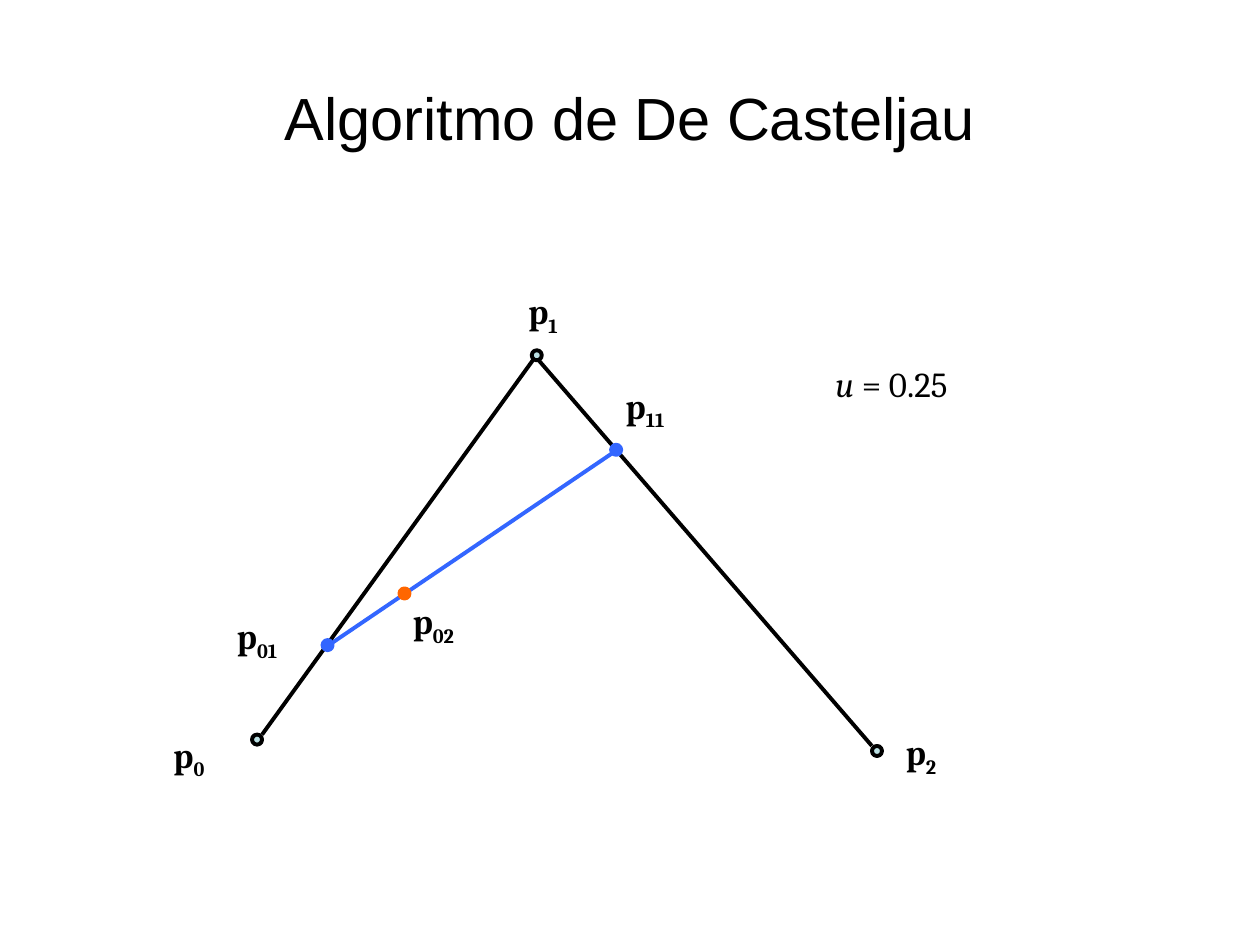
from dataclasses import dataclass

from pptx import Presentation
from pptx import util as u
from pptx.dml.color import RGBColor
from pptx.enum import shapes, text
from pptx.oxml import parse_xml
from pptx.oxml.ns import nsdecls

PX = 9144  # EMU in one px, 100 px to the inch


@dataclass(frozen=True)
class Theme:
    ink: str = "000000"
    pale: str = "BBE0E3"
    blue: str = "3366FF"
    fire: str = "FF6600"
    head: str = "Arial"
    body: str = "Cambria"
    big: int = 34
    mid: int = 20
    line: float = 2.25


@dataclass(frozen=True)
class Edge:
    x1: int
    y1: int
    x2: int
    y2: int
    color: str


@dataclass(frozen=True)
class Dot:
    x: int
    y: int
    fill: str
    line: str


@dataclass(frozen=True)
class Label:
    sub: str
    x: int
    y: int
    w: int


T = Theme()
DOT = 8
TALL = 43

EDGES = [
    Edge(261, 512, 487, 359, T.blue),
    Edge(208, 583, 425, 283, T.ink),
    Edge(425, 283, 692, 592, T.ink),
]
DOTS = [
    Dot(200, 583, T.pale, T.ink),
    Dot(422, 278, T.pale, T.ink),
    Dot(692, 592, T.pale, T.ink),
    Dot(256, 508, T.blue, T.blue),
    Dot(485, 353, T.blue, T.blue),
    Dot(317, 467, T.fire, T.fire),
]
LABELS = [
    Label("0", 127, 577, 46),
    Label("1", 408, 225, 46),
    Label("2", 708, 575, 46),
    Label("11", 483, 300, 58),
    Label("01", 175, 483, 58),
    Label("02", 315, 471, 58),
]


def px(n: int) -> u.Emu:
    return u.Emu(n * PX)


def rgb(color: str) -> RGBColor:
    return RGBColor.from_string(color)


def write(par, words: str, *, font: str = T.body, size: int = T.mid,
          bold: bool = False, slant: bool = False, sub: bool = False) -> None:
    par.alignment = text.PP_ALIGN.CENTER
    run = par.add_run()
    run.text = words
    face = run.font
    face.name, face.size = font, u.Pt(size)
    face.bold, face.italic = bold, slant
    face.color.rgb = rgb(T.ink)
    if sub:
        run._r.get_or_add_rPr().set("baseline", "-25000")


def add_box(slide, x: int, y: int, w: int, wrap: bool = True):
    box = slide.shapes.add_textbox(px(x), px(y), px(w), px(TALL))
    frame = box.text_frame
    frame.word_wrap = wrap
    frame.auto_size = text.MSO_AUTO_SIZE.SHAPE_TO_FIT_TEXT
    return frame.paragraphs[0]


def add_edge(slide, edge: Edge) -> None:
    line = slide.shapes.add_connector(
        shapes.MSO_CONNECTOR.STRAIGHT,
        px(edge.x1), px(edge.y1), px(edge.x2), px(edge.y2))
    line.line.color.rgb = rgb(edge.color)
    line.line.width = u.Pt(T.line)
    line._element.spPr.append(parse_xml(f"<a:effectLst {nsdecls('a')}/>"))


def add_dot(slide, dot: Dot) -> None:
    mark = slide.shapes.add_shape(
        shapes.MSO_SHAPE.OVAL, px(dot.x), px(dot.y), px(DOT), px(DOT))
    mark.shadow.inherit = False
    mark.fill.solid()
    mark.fill.fore_color.rgb = rgb(dot.fill)
    mark.line.color.rgb = rgb(dot.line)
    mark.line.width = u.Pt(T.line)


def add_label(slide, label: Label) -> None:
    par = add_box(slide, label.x, label.y, label.w)
    write(par, "p", bold=True)
    write(par, label.sub, bold=True, sub=True)


def main() -> None:
    deck = Presentation()
    deck.slide_width, deck.slide_height = px(1000), px(750)
    slide = deck.slides.add_slide(deck.slide_layouts[5])

    # Title
    title = slide.shapes.title
    title.left, title.top, title.width, title.height = map(
        px, (50, 30, 900, 125))
    title.text_frame.vertical_anchor = text.MSO_ANCHOR.MIDDLE
    write(title.text_frame.paragraphs[0], "Algoritmo de De Casteljau",
          font=T.head, size=T.big)

    # Control polygon and its points
    for edge in EDGES:
        add_edge(slide, edge)
    for dot in DOTS:
        add_dot(slide, dot)
    for label in LABELS:
        add_label(slide, label)

    # Parameter value
    par = add_box(slide, 650, 283, 115, wrap=False)
    write(par, "u", slant=True)
    write(par, " = 0.25")

    deck.save("out.pptx")


if __name__ == "__main__":
    main()
